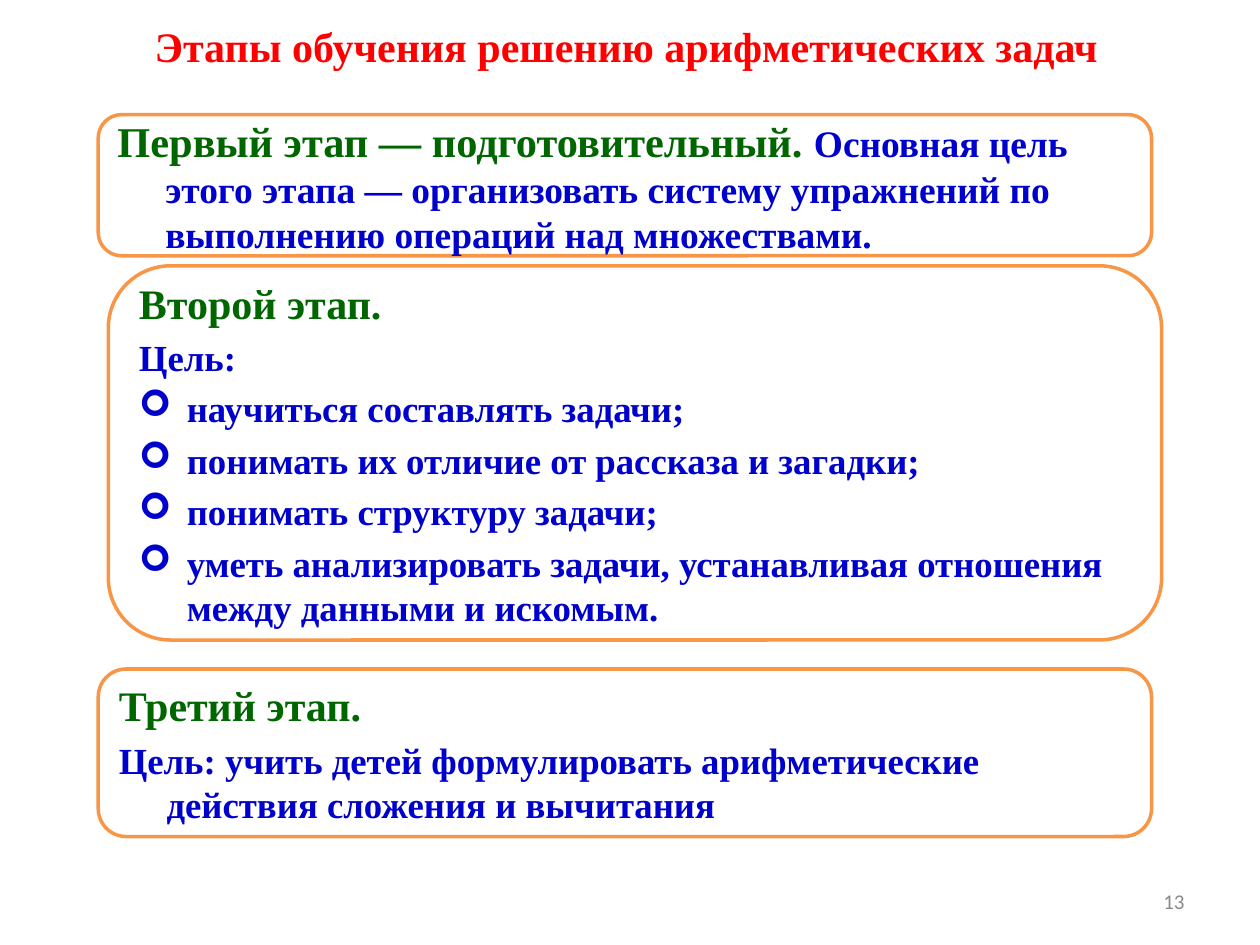
import pptx
import pptx.util
import pptx.dml.color
import pptx.enum.shapes
import pptx.enum.text
import pptx.oxml.ns
from lxml import etree
from pptx.util import Inches

COLORS = {
    "title": "FF0000",
    "stage": "006600",
    "goal": "0000CC",
    "frame": "F79646",
    "paper": "FFFFFF",
    "number": "898989",
}
SERIF = "Times New Roman"
ALIGN = pptx.enum.text.PP_ALIGN
HANGING = Inches(0.38)


def rgb(name):
    """Return the named palette colour."""
    return pptx.dml.color.RGBColor.from_string(COLORS[name])


def add_run(paragraph, text, size, color, font=SERIF, bold=True):
    """Append formatted text to a paragraph."""
    run = paragraph.add_run()
    run.text = text
    run.font.size = pptx.util.Pt(size)
    run.font.name = font
    run.font.bold = bold
    run.font.color.rgb = rgb(color)


def set_hanging(paragraph, bullet=None):
    """Give a paragraph a hanging indent and an optional bullet."""
    properties = paragraph._p.get_or_add_pPr()
    properties.set("marL", str(HANGING))
    properties.set("indent", str(-HANGING))
    qn = pptx.oxml.ns.qn
    if bullet:
        etree.SubElement(properties, qn("a:buFont"), typeface="Wingdings")
        etree.SubElement(properties, qn("a:buChar"), char=bullet)
    else:
        etree.SubElement(properties, qn("a:buNone"))


def add_line(slide, box, text, align, **text_format):
    """Place a single line of text in a box."""
    frame = slide.shapes.add_textbox(*map(Inches, box)).text_frame
    frame.word_wrap = True
    frame.vertical_anchor = pptx.enum.text.MSO_ANCHOR.MIDDLE
    paragraph = frame.paragraphs[0]
    paragraph.alignment = align
    add_run(paragraph, text, **text_format)


def add_stage(slide, box, paragraphs):
    """Place a rounded frame holding (bullet, runs) paragraphs."""
    stage = slide.shapes.add_shape(
        pptx.enum.shapes.MSO_SHAPE.ROUNDED_RECTANGLE, *map(Inches, box))
    stage.shadow.inherit = False
    stage.fill.solid()
    stage.fill.fore_color.rgb = rgb("paper")
    stage.line.color.rgb = rgb("frame")
    stage.line.width = pptx.util.Pt(2)
    frame = stage.text_frame
    frame.word_wrap = True
    frame.vertical_anchor = pptx.enum.text.MSO_ANCHOR.MIDDLE
    for index, (bullet, runs) in enumerate(paragraphs):
        paragraph = frame.add_paragraph() if index else frame.paragraphs[0]
        set_hanging(paragraph, bullet)
        paragraph.alignment = ALIGN.LEFT
        if index:
            paragraph.space_before = pptx.util.Pt(0.2 * runs[0][1])
        for text, size, color in runs:
            add_run(paragraph, text, size, color)


def build_stages_slide(presentation):
    """Build the slide with the three teaching stages."""
    slide = presentation.slides.add_slide(presentation.slide_layouts[6])
    add_line(slide, (0.47, 0, 9, 0.72),
             "Этапы обучения решению арифметических задач",
             ALIGN.CENTER, size=24, color="title")

    add_stage(slide, (0.78, 0.91, 8.36, 1.12), [
        (None, [
            ("Первый этап — подготовительный. ", 24.2, "stage"),
            ("Основная цель этого этапа — организовать систему упражнений "
             "по выполнению операций над множествами.", 21.4, "goal"),
        ]),
    ])

    skills = [
        "научиться составлять задачи;",
        "понимать их отличие от рассказа и загадки;",
        "понимать структуру задачи;",
        "уметь анализировать задачи, устанавливая отношения "
        "между данными и искомым.",
    ]
    add_stage(slide, (0.86, 2.11, 8.36, 2.97), [
        (None, [("Второй этап.", 24, "stage")]),
        (None, [("Цель:", 21, "goal")]),
        *[("➢", [(skill, 21, "goal")]) for skill in skills],
    ])

    add_stage(slide, (0.78, 5.31, 8.36, 1.33), [
        (None, [("Третий этап.", 24, "stage")]),
        (None, [("Цель: учить детей формулировать арифметические действия "
                 "сложения и вычитания", 21, "goal")]),
    ])

    add_line(slide, (7.17, 6.95, 2.33, 0.4), "13", ALIGN.RIGHT,
             size=12, color="number", font="Calibri", bold=False)


def main():
    """Create and save the presentation."""
    presentation = pptx.Presentation()
    presentation.slide_width = Inches(10)
    presentation.slide_height = Inches(7.5)
    build_stages_slide(presentation)
    presentation.save("out.pptx")


if __name__ == "__main__":
    main()
